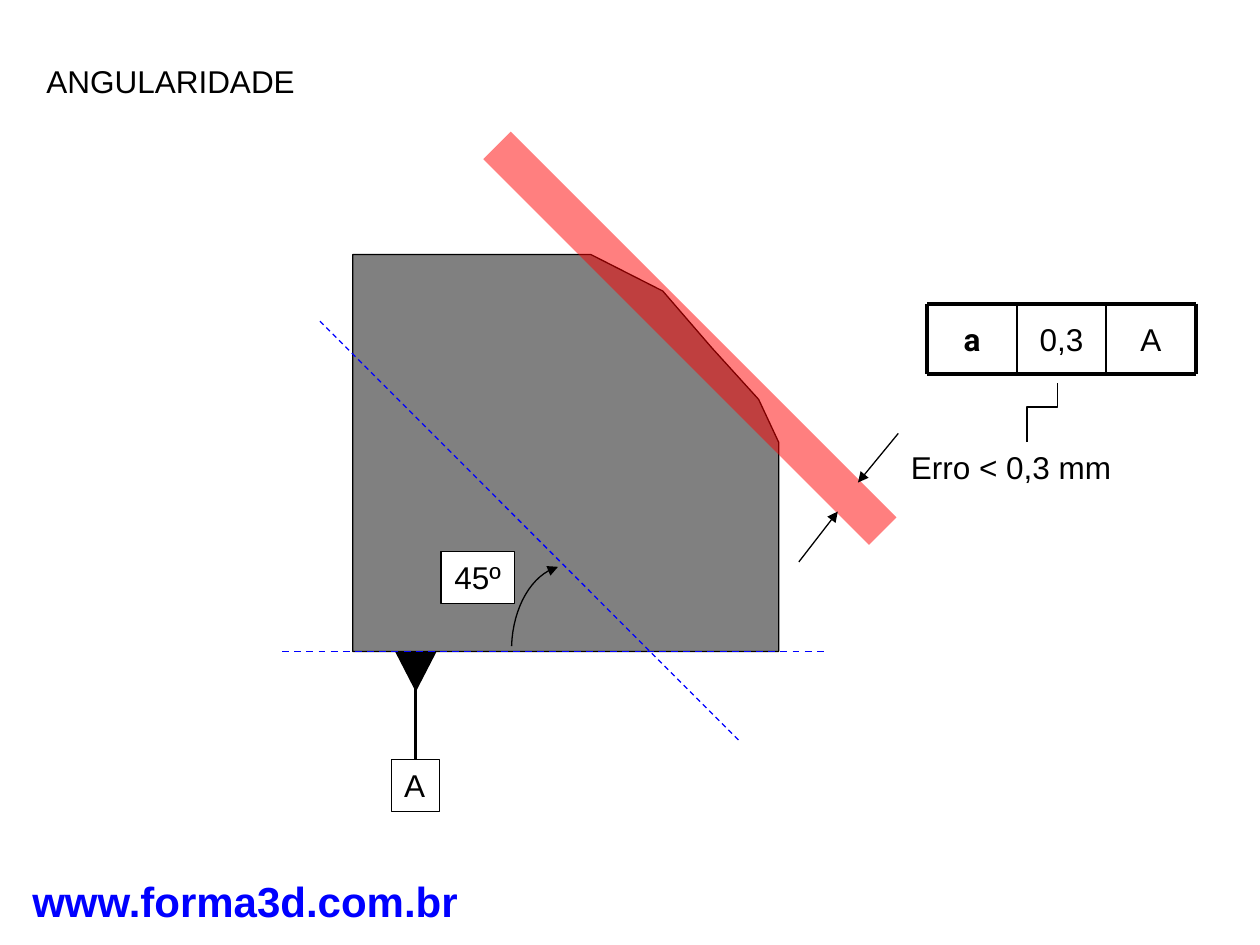
from dataclasses import dataclass

from lxml import etree
from pptx import Presentation
from pptx import util as u
from pptx.dml.color import RGBColor
from pptx.enum import dml, shapes, text
from pptx.oxml.ns import qn

BLACK, WHITE, BLUE, GREY, RED = "000000", "FFFFFF", "0000FF", "808080", "FF0000"
THIN, MEDIUM, THICK = 0.75, 1, 2.25


@dataclass
class Box:
    """A region in inches; parts inside it are given in percent of its size."""
    left: float
    top: float
    width: float
    height: float

    def point(self, x, y):
        return (u.Inches(self.left + self.width * x / 100),
                u.Inches(self.top + self.height * y / 100))

    def area(self, x, y, width, height):
        return (*self.point(x, y), u.Inches(self.width * width / 100),
                u.Inches(self.height * height / 100))


WHOLE = (0, 0, 100, 100)


def color(hex_string):
    return RGBColor.from_string(hex_string)


def style_line(shape, line_color, width, dashed=False, arrow=False):
    shape.line.color.rgb = color(line_color)
    shape.line.width = u.Pt(width)
    if dashed:
        shape.line.dash_style = dml.MSO_LINE.DASH
    if arrow:
        line = shape._element.spPr.find(qn("a:ln"))
        etree.SubElement(line, qn("a:tailEnd"), type="triangle")


def add_line(slide, box, start, end, line_color=BLACK, width=THIN, **style):
    connector = slide.shapes.add_connector(
        shapes.MSO_CONNECTOR.STRAIGHT, *box.point(*start), *box.point(*end))
    style_line(connector, line_color, width, **style)
    etree.SubElement(connector._element.spPr, qn("a:effectLst"))


def add_outline(slide, box, points, fill=None, **style):
    """Draw a closed outline when a fill is given, otherwise an open path."""
    start, *others = [box.point(*point) for point in points]
    builder = slide.shapes.build_freeform(*start)
    builder.add_line_segments(others, close=fill is not None)
    shape = builder.convert_to_shape()
    shape.shadow.inherit = False
    if fill:
        shape.fill.solid()
        shape.fill.fore_color.rgb = color(fill)
    else:
        shape.fill.background()
    style_line(shape, BLACK, THIN, **style)


def add_preset(slide, preset, area, fill, line_color=BLACK):
    shape = slide.shapes.add_shape(preset, *area)
    shape.shadow.inherit = False
    shape.fill.solid()
    shape.fill.fore_color.rgb = color(fill)
    if line_color:
        style_line(shape, line_color, THIN)
    else:
        shape.line.fill.background()
    return shape


def write(shape, words, align=text.PP_ALIGN.CENTER, anchor=text.MSO_ANCHOR.TOP,
          size=18, font="Arial", font_color=BLACK, bold=False):
    frame = shape.text_frame
    frame.text = words
    frame.word_wrap = False
    frame.vertical_anchor = anchor
    paragraph = frame.paragraphs[0]
    paragraph.alignment = align
    run_font = paragraph.runs[0].font
    run_font.size = u.Pt(size)
    run_font.name = font
    run_font.bold = bold
    run_font.color.rgb = color(font_color)


def add_label(slide, area, words, **style):
    write(slide.shapes.add_textbox(*area), words, **style)


def add_framed_label(slide, area, words, line_color=BLACK, **style):
    rectangle = add_preset(slide, shapes.MSO_SHAPE.RECTANGLE, area, WHITE, line_color)
    write(rectangle, words, **style)


def bezier(start, first, second, end, steps=16):
    for step in range(steps + 1):
        t = step / steps
        weights = ((1 - t) ** 3, 3 * t * (1 - t) ** 2, 3 * t * t * (1 - t), t ** 3)
        yield tuple(sum(weight * value for weight, value in zip(weights, values))
                    for values in zip(start, first, second, end))


def add_datum(slide, box):
    add_line(slide, box, (50, 20), (50, 74), width=1.5)
    triangle = add_preset(slide, shapes.MSO_SHAPE.ISOSCELES_TRIANGLE,
                          box.area(8, 0, 84, 24.4), BLACK)
    triangle._element.spPr.find(qn("a:xfrm")).set("flipV", "1")
    add_framed_label(slide, box.area(0, 67.7, 100, 32.3), "A",
                     align=text.PP_ALIGN.LEFT)


def add_part(slide, box):
    """Draw the machined part, its 45 degree angle and the tolerance zone."""
    add_outline(slide, box, [(0, 100), (100, 100), (100, 47.3), (95.3, 36.5),
                             (84.3, 23.5), (72.8, 9.2), (55.9, 0), (0, 0)], fill=GREY)
    add_line(slide, box, (-7.7, 16.8), (91.1, 122.9), BLUE, dashed=True)
    arc = bezier((37.3, 98.7), (37.6, 88.9), (42, 80.6), (48.2, 78.7))
    add_outline(slide, box, arc, arrow=True)
    add_framed_label(slide, box.area(20.7, 74.9, 17.2, 13), "45º")

    zone = add_preset(slide, shapes.MSO_SHAPE.RECTANGLE,
                      box.area(15.1, 16.2, 128.1, 9.8), RED, line_color=None)
    zone.rotation = 45
    zone_color = next(zone._element.spPr.iter(qn("a:srgbClr")))
    etree.SubElement(zone_color, qn("a:alpha"), val="50000")

    add_line(slide, box, (-16.6, 100), (111.5, 100), BLUE, MEDIUM, dashed=True)


def add_error_callout(slide, box):
    add_line(slide, box, (30.6, 0), (18.2, 38.2), arrow=True)
    add_line(slide, box, (0, 100), (12, 60.8), arrow=True)
    add_label(slide, box.area(30.6, 6.9, 69.4, 39.2), "Erro < 0,3 mm")


def add_tolerance_frame(slide, box):
    cells = [("a", {"font": "Roboto", "bold": True}), ("0,3", {}), ("A", {})]
    column = 100 / len(cells)
    for index, (words, style) in enumerate(cells):
        add_framed_label(slide, box.area(index * column, 0, column, 100), words,
                         line_color=None, anchor=text.MSO_ANCHOR.MIDDLE, **style)
    for y in (0, 100):
        add_line(slide, box, (0, y), (100, y), width=THICK)
    for index in range(len(cells) + 1):
        width = THICK if index in (0, len(cells)) else MEDIUM
        add_line(slide, box, (index * column, 0), (index * column, 100), width=width)
    add_outline(slide, box, [(37.1, 196.4), (37.1, 146.4), (48.4, 146.4), (48.4, 112.5)])


def main():
    presentation = Presentation()
    presentation.slide_width = u.Inches(10)
    presentation.slide_height = u.Inches(7.5)
    slide = presentation.slides.add_slide(presentation.slide_layouts[6])

    add_label(slide, Box(0.15, 6.9, 3.59, 0.5).area(*WHOLE), "www.forma3d.com.br",
              size=24, font_color=BLUE, bold=True)
    add_label(slide, Box(0.27, 0.44, 2.17, 0.4).area(*WHOLE), "ANGULARIDADE",
              align=text.PP_ALIGN.LEFT)
    add_datum(slide, Box(3.11, 5.17, 0.38, 1.27))
    add_part(slide, Box(2.8, 2.02, 3.38, 3.15))
    add_error_callout(slide, Box(6.34, 3.44, 2.58, 1.02))
    add_tolerance_frame(slide, Box(7.36, 2.41, 2.13, 0.56))
    presentation.save("out.pptx")


if __name__ == "__main__":
    main()
